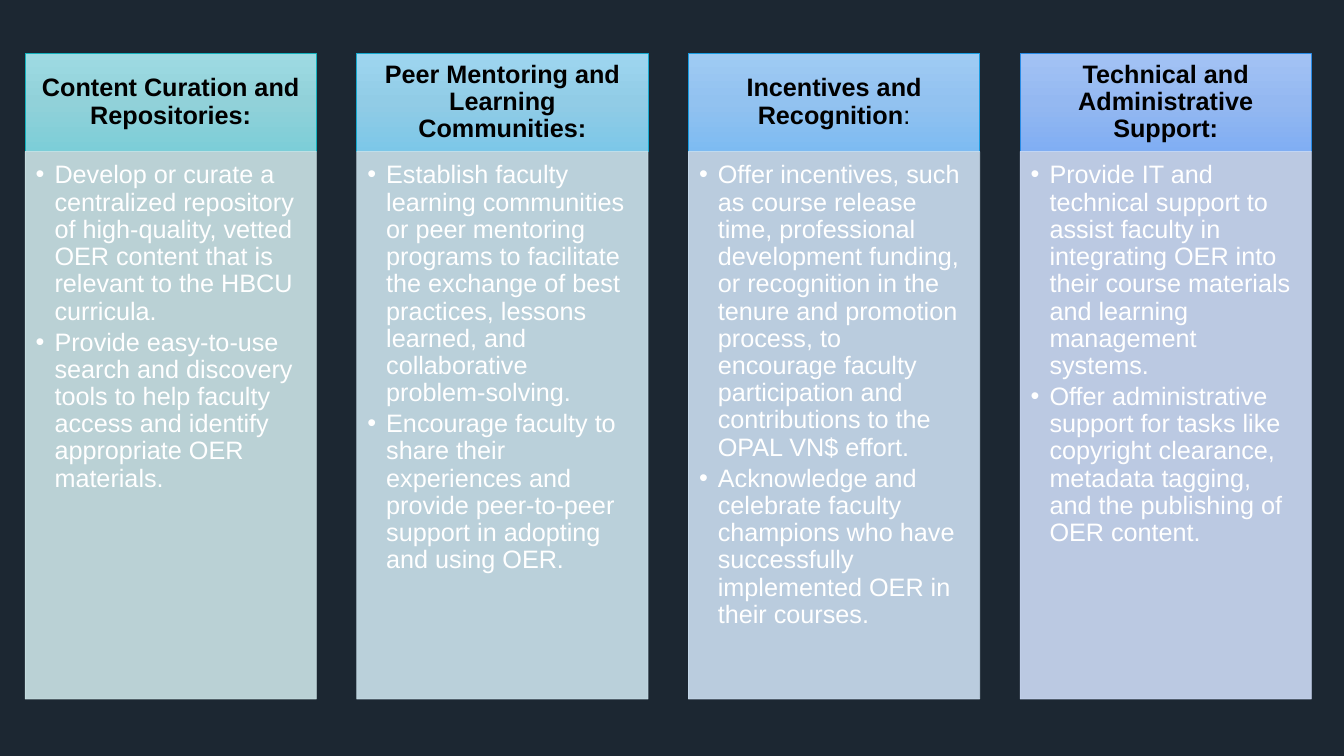
import pptx
import pptx.dml.color
import pptx.enum.shapes
import pptx.enum.text
import pptx.oxml
import pptx.oxml.ns
import pptx.util
from pptx.dml.color import RGBColor
from pptx.util import Pt

NAVY = RGBColor(0x1C, 0x27, 0x32)
BLACK = RGBColor(0x00, 0x00, 0x00)
WHITE = RGBColor(0xFF, 0xFF, 0xFF)

LEFT, TOP, WIDTH, PITCH = 18, 38, 208, 236.9
HEAD_HEIGHT, BODY_HEIGHT = 70.3, 391
A_NS = pptx.oxml.ns.nsdecls("a")

# Heading runs (text, bold), heading gradient, heading line, body colour, bullets
COLUMNS = [
    ([("Content Curation and Repositories:", True)],
     (RGBColor(0x9E, 0xDB, 0xE3), RGBColor(0x91, 0xD1, 0xD9), RGBColor(0x7C, 0xCE, 0xD8)),
     RGBColor(0x14, 0xB1, 0xBC), RGBColor(0xCC, 0xE4, 0xE7),
     ["Develop or curate a centralized repository of high-quality, vetted OER content "
      "that is relevant to the HBCU curricula.",
      "Provide easy-to-use search and discovery tools to help faculty access and "
      "identify appropriate OER materials."]),
    ([("Peer Mentoring and Learning Communities:", True)],
     (RGBColor(0x9E, 0xD6, 0xF0), RGBColor(0x91, 0xCC, 0xE6), RGBColor(0x7C, 0xC7, 0xE8)),
     RGBColor(0x16, 0xA9, 0xCF), RGBColor(0xCC, 0xE3, 0xED),
     ["Establish faculty learning communities or peer mentoring programs to facilitate "
      "the exchange of best practices, lessons learned, and collaborative problem-solving.",
      "Encourage faculty to share their experiences and provide peer-to-peer support in "
      "adopting and using OER."]),
    ([("Incentives and Recognition", True), (":", False)],
     (RGBColor(0x9F, 0xCB, 0xF3), RGBColor(0x92, 0xC2, 0xF0), RGBColor(0x7D, 0xBB, 0xF2)),
     RGBColor(0x19, 0x9D, 0xE2), RGBColor(0xCC, 0xDF, 0xF1),
     ["Offer incentives, such as course release time, professional development funding, "
      "or recognition in the tenure and promotion process, to encourage faculty "
      "participation and contributions to the OPAL VN$ effort.",
      "Acknowledge and celebrate faculty champions who have successfully implemented "
      "OER in their courses."]),
    ([("Technical and Administrative Support:", True)],
     (RGBColor(0xA3, 0xC3, 0xF4), RGBColor(0x94, 0xB8, 0xF1), RGBColor(0x80, 0xAE, 0xF3)),
     RGBColor(0x29, 0x8C, 0xE7), RGBColor(0xCD, 0xDB, 0xF6),
     ["Provide IT and technical support to assist faculty in integrating OER into their "
      "course materials and learning management systems.",
      "Offer administrative support for tasks like copyright clearance, metadata tagging, "
      "and the publishing of OER content."]),
]


def add_box(left, top, width, height, line_color, margins):
    sp = slide.shapes.add_shape(pptx.enum.shapes.MSO_SHAPE.RECTANGLE,
                                Pt(left), Pt(top), Pt(width), Pt(height))
    sp.shadow.inherit = False
    sp.line.color.rgb = line_color
    sp.line.width = Pt(0.5)
    tf = sp.text_frame
    tf.word_wrap = True
    tf.margin_left, tf.margin_top, tf.margin_right, tf.margin_bottom = map(Pt, margins)
    return sp


def format_paragraph(p, color, align, space_after):
    p.font.size = Pt(18)
    p.font.name = "Arial"
    p.font.color.rgb = color
    p.alignment = align
    p.line_spacing = 0.9
    p.space_after = Pt(space_after)


prs = pptx.Presentation()
prs.slide_width, prs.slide_height = Pt(960), Pt(540)
slide = prs.slides.add_slide(prs.slide_layouts[6])
slide.background.fill.solid()
slide.background.fill.fore_color.rgb = NAVY

backdrop = add_box(0, 0, 960, 540, NAVY, (0, 0, 0, 0))
backdrop.fill.solid()
backdrop.fill.fore_color.rgb = NAVY
backdrop.line.fill.background()

for i, (heading, gradient, line_color, body_color, bullets) in enumerate(COLUMNS):
    left = LEFT + i * PITCH

    head = add_box(left, TOP, WIDTH, HEAD_HEIGHT, line_color, (10, 5.7, 10, 5.7))
    head.fill.gradient()
    head.fill.gradient_angle = 270
    stops = head._element.spPr.find(".//" + pptx.oxml.ns.qn("a:gsLst"))
    stops.clear()
    for position, color in zip((0, 50000, 100000), gradient):
        stops.append(pptx.oxml.parse_xml(
            f'<a:gs {A_NS} pos="{position}"><a:srgbClr val="{color}"/></a:gs>'))
    head.text_frame.vertical_anchor = pptx.enum.text.MSO_ANCHOR.MIDDLE
    p = head.text_frame.paragraphs[0]
    format_paragraph(p, BLACK, pptx.enum.text.PP_ALIGN.CENTER, 6.3)
    for text, bold in heading:
        r = p.add_run()
        r.text = text
        r.font.bold = bold

    body = add_box(left, TOP + HEAD_HEIGHT, WIDTH, BODY_HEIGHT, body_color,
                   (7.5, 7.5, 10, 11.3))
    body.fill.solid()
    body.fill.fore_color.rgb = body_color
    for color in body._element.spPr.iter(pptx.oxml.ns.qn("a:srgbClr")):
        color.append(pptx.oxml.parse_xml(f'<a:alpha {A_NS} val="90000"/>'))
    tf = body.text_frame
    tf.vertical_anchor = pptx.enum.text.MSO_ANCHOR.TOP
    for n, text in enumerate(bullets):
        p = tf.add_paragraph() if n else tf.paragraphs[0]
        p.text = text
        p.level = 1
        format_paragraph(p, WHITE, pptx.enum.text.PP_ALIGN.LEFT, 2.7)
        pPr = p._p.get_or_add_pPr()
        pPr.set("marL", str(Pt(13.5)))
        pPr.set("indent", str(-Pt(13.5)))
        for tag in (f'<a:buFont {A_NS} typeface="Arial"/>', f'<a:buChar {A_NS} char="•"/>'):
            pPr.insert_element_before(pptx.oxml.parse_xml(tag),
                                      "a:tabLst", "a:defRPr", "a:extLst")

prs.save("out.pptx")
